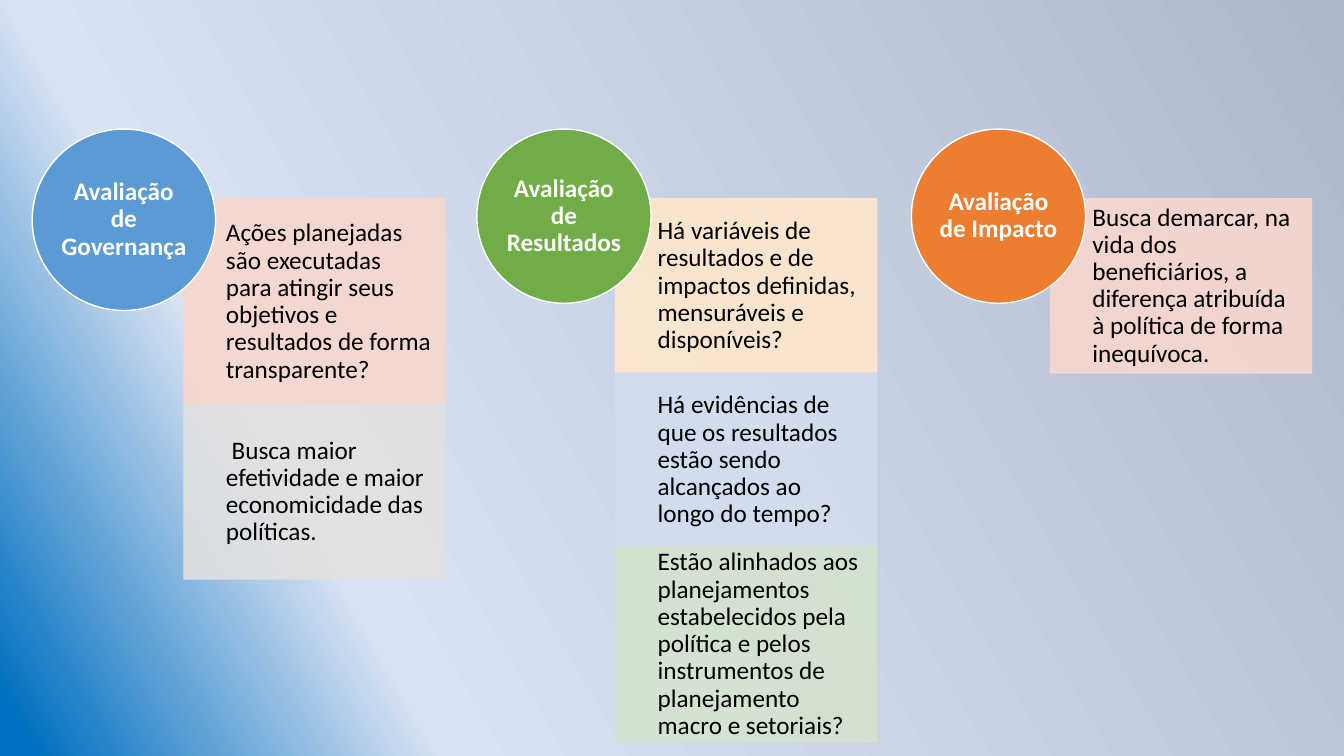
from lxml.etree import SubElement
from pptx import Presentation
from pptx.dml.color import RGBColor
from pptx.enum.shapes import MSO_SHAPE as Shape
from pptx.enum.text import MSO_ANCHOR as Anchor, PP_ALIGN as Align
from pptx.oxml.ns import qn
from pptx.util import Pt

COLORS = {
    "slate": "ADB9CA", "mist": "DAE3F3", "deep": "0070C0",
    "blue": "5B9BD5", "green": "70AD47", "orange": "ED7D31",
    "rose": "F8D7CE", "gray": "E1E1E1", "cream": "FFE8CC",
    "sky": "D2DEEF", "sage": "D5E3CF", "white": "FFFFFF", "black": "000000",
}
TOP, CIRCLE_TOP, BOX_WIDTH = 142, 92.2, 186.5

COLUMNS = [
    ("Avaliação de Governança", "blue", 23, 131, 129.6, 131.4, [
        ("Ações planejadas são executadas para atingir seus objetivos e "
         "resultados de forma transparente?", "rose", 147.2),
        (" Busca maior efetividade e maior economicidade das políticas.",
         "gray", 124.4),
    ]),
    ("Avaliação de Resultados", "green", 340.6, 124.4, 124.4, 439.7, [
        ("Há variáveis de resultados e de impactos definidas, mensuráveis e "
         "disponíveis?", "cream", 124.4),
        ("Há evidências de que os resultados estão sendo alcançados ao longo "
         "do tempo?", "sky", 124.4),
        ("Estão alinhados aos planejamentos estabelecidos pela política e pelos "
         "instrumentos de planejamento macro e setoriais?", "sage", 139),
    ]),
    ("Avaliação de Impacto", "orange", 651, 124.4, 124.4, 750.3, [
        ("Busca demarcar, na vida dos beneficiários, a diferença atribuída à "
         "política de forma inequívoca.", "rose", 124.4),
    ]),
]


class Deck:
    """Holds the text style and the current slide."""

    def __init__(self, prs, font="Calibri", size=18):
        self.s = prs.slides.add_slide(prs.slide_layouts[6])
        self.font, self.size = font, size

    def background(self, stops, angle):
        """Fill the slide with a linear gradient of (percent, color) stops."""
        fill = self.s.background.fill
        fill.gradient()
        fill.gradient_angle = angle
        stop_list = self.s.element.find(".//" + qn("a:gsLst"))
        for stop in list(stop_list):
            stop_list.remove(stop)
        for percent, color in stops:
            stop = SubElement(stop_list, qn("a:gs"), pos=str(percent * 1000))
            SubElement(stop, qn("a:srgbClr"), val=COLORS[color])

    def shape(self, kind, box, text, fill, line, ink, insets, align, bold=False):
        """Add a filled shape with one vertically centred paragraph."""
        sp = self.s.shapes.add_shape(kind, *map(Pt, box))
        sp.shadow.inherit = False
        sp.fill.solid()
        sp.fill.fore_color.rgb = RGBColor.from_string(COLORS[fill])
        sp.line.color.rgb = RGBColor.from_string(COLORS[line])
        sp.line.width = Pt(1)
        tf = sp.text_frame
        tf.text = text
        tf.word_wrap = True
        tf.vertical_anchor = Anchor.MIDDLE
        tf.margin_left, tf.margin_top, tf.margin_right, tf.margin_bottom = map(Pt, insets)
        p = tf.paragraphs[0]
        p.alignment, p.line_spacing = align, 0.9
        font = p.runs[0].font
        font.name, font.size, font.bold = self.font, Pt(self.size), bold
        font.color.rgb = RGBColor.from_string(COLORS[ink])
        return sp

    def circle(self, box, text, color):
        """Add a column heading."""
        self.shape(Shape.OVAL, box, text, color, "white", "white",
                   (0, 0, 0, 0), Align.CENTER, True)

    def panel(self, box, text, color):
        """Add a slightly transparent box of body text."""
        sp = self.shape(Shape.RECTANGLE, box, text, color, color, "black",
                        (30, 10, 10, 10), Align.LEFT)
        for rgb in sp.element.spPr.iter(qn("a:srgbClr")):
            SubElement(rgb, qn("a:alpha"), val="90000")


def main():
    """Build the slide and save it."""
    prs = Presentation()
    prs.slide_width, prs.slide_height = Pt(960), Pt(540)
    deck = Deck(prs)
    deck.background([(0, "slate"), (75, "mist"), (98, "deep")], 210)
    for heading, color, left, width, height, panel_left, panels in COLUMNS:
        top = TOP
        for text, tint, panel_height in panels:
            deck.panel((panel_left, top, BOX_WIDTH, panel_height), text, tint)
            top += panel_height
        deck.circle((left, CIRCLE_TOP, width, height), heading, color)
    prs.save("out.pptx")


if __name__ == "__main__":
    main()
